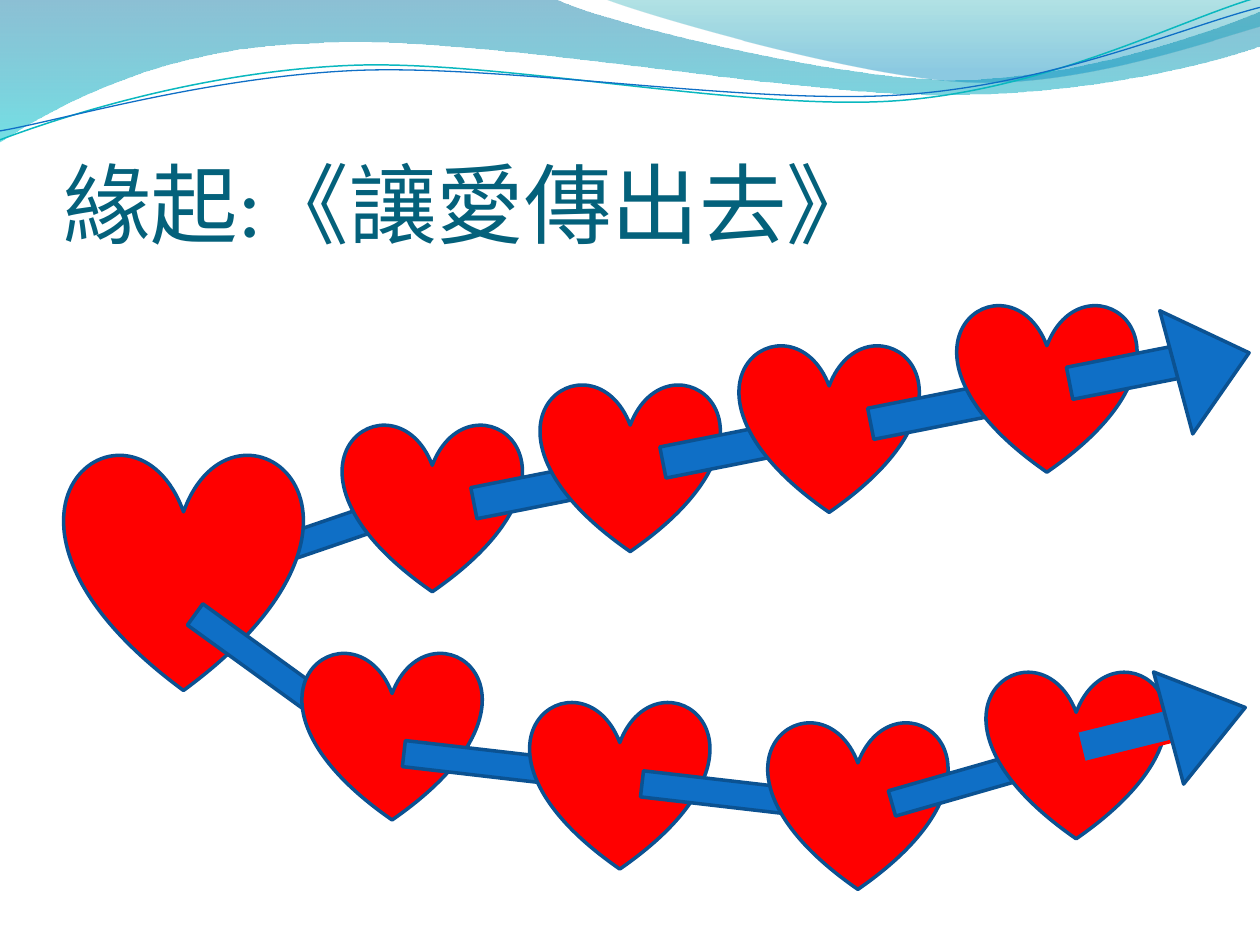
from lxml import etree
from pptx import Presentation
from pptx.dml.color import RGBColor
from pptx.enum.lang import MSO_LANGUAGE_ID
from pptx.enum.shapes import MSO_SHAPE
from pptx.enum.text import MSO_ANCHOR, MSO_AUTO_SIZE, PP_ALIGN
from pptx.oxml.ns import qn
from pptx.util import Cm, Pt

RECT, HEART, TRIANGLE = MSO_SHAPE.RECTANGLE, MSO_SHAPE.HEART, MSO_SHAPE.ISOSCELES_TRIANGLE
LEFT, BOTTOM, NO_FIT = PP_ALIGN.LEFT, MSO_ANCHOR.BOTTOM, MSO_AUTO_SIZE.NONE
CHINESE = MSO_LANGUAGE_ID.TRADITIONAL_CHINESE

THEME = {
    "font": "Calibri", "title_size": 50, "title": "04617B",
    "heart": "FF0000", "arrow": "0F6FC6", "outline": "0B5292", "outline_width": 2,
}

# Content: all lengths in centimetres
TITLE = "緣起:《讓愛傳出去》"
TITLE_BOX = (1.27, 1.96, 22.86, 3.18)

# Kind of part: preset, width, height, fill, outline
KINDS = {
    "big heart": (HEART, 4.8, 4.8, "heart", "outline"),
    "heart": (HEART, 3.61, 3.4, "heart", "outline"),
    "long bar": (RECT, 3.71, 0.53, "arrow", "outline"),
    "short bar": (RECT, 2.51, 0.64, "arrow", "outline"),
    "upper shaft": (RECT, 2.46, 0.66, "arrow", "outline"),
    "lower shaft": (RECT, 2.51, 0.66, "arrow", "heart"),
    "upper tip": (TRIANGLE, 2.57, 1.52, "arrow", "outline"),
    "lower tip": (TRIANGLE, 2.34, 1.6, "arrow", "outline"),
}
# Chain, back to front: kind, left, top, rotation
CHAIN = [
    ("long bar", 4.67, 10.52, 161.1), ("heart", 6.91, 8.53, 0),
    ("big heart", 1.3, 9.12, 0),
    ("long bar", 3.58, 13.21, 35.9), ("heart", 6.1, 13.13, 0),
    ("long bar", 8.13, 15.14, 6.6), ("heart", 10.69, 14.12, 0),
    ("long bar", 12.93, 15.75, 6.6), ("heart", 15.49, 14.53, 0),
    ("long bar", 17.91, 15.42, 344), ("heart", 19.89, 13.51, 0),
    ("lower shaft", 21.74, 14.43, 346.1), ("lower tip", 23.16, 13.67, 75),
    ("short bar", 9.53, 9.58, 348.8), ("heart", 10.9, 7.72, 0),
    ("short bar", 13.34, 8.76, 348.8), ("heart", 14.91, 6.93, 0),
    ("short bar", 17.53, 7.98, 348.8), ("heart", 19.3, 6.12, 0),
    ("upper shaft", 21.54, 7.16, 348.8), ("upper tip", 23.16, 6.55, 75),
]

# Waves: a start point, then straight steps (1 point) or Bézier steps (3 points)
# Bands carry gradient stops: position %, colour, opacity %
BANDS = [
    ([[(0, 0)], [(11.18, -0.03)],
      [(12.09, 0.43), (16.87, 1.6), (19.25, 1.6)],
      [(21.67, 1.6), (24.33, 0.66), (25.4, 0.23)], [(25.43, 0.91)],
      [(24.97, 1.12), (22.1, 1.93), (18.95, 1.91)],
      [(15.8, 1.91), (9.7, 0.71), (6.53, 0.86)],
      [(3.28, 0.91), (1.17, 2.11), (-0.03, 2.87)], [(0, 0)]],
     [(0, "0074A1", 45), (100, "00C6CF", 55)]),
    ([[(12.17, -0.03)],
      [(12.93, 0.28), (17.32, 1.57), (19.53, 1.65)],
      [(21.74, 1.75), (24.41, 0.81), (25.4, 0.53)], [(25.4, 0)],
      [(12.17, -0.03)]],
     [(0, "00A1A9", 30), (80, "008BBF", 45)]),
]
# Thin lines carry a colour and a width in points
THIN_LINES = [
    ([[(0, 2.82)],
      [(1.22, 2.36), (4.01, 1.45), (7.04, 1.32)],
      [(10.03, 1.19), (15.06, 2.26), (18.11, 2.03)],
      [(21.16, 1.8), (23.83, 0.38), (25.35, -0.05)]], "0AB8BF", 0.85),
    ([[(0, 2.64)],
      [(1.19, 2.44), (4.17, 1.55), (7.19, 1.42)],
      [(10.24, 1.3), (15.16, 2.13), (18.21, 1.91)],
      [(21.23, 1.7), (23.9, 0.53), (25.4, 0.15)]], "0F6FC6", 0.75),
]


def rgb(value):
    return RGBColor.from_string(value)


def add_wave(shapes, steps, close):
    """Freeform whose three-point steps become Bézier curves."""
    points = [(Cm(x), Cm(y)) for step in steps for x, y in step]
    builder = shapes.build_freeform(*points[0])
    builder.add_line_segments(points[1:], close=close)
    sp = builder.convert_to_shape()
    sp.shadow.inherit = False
    segments = iter(sp._element.findall(".//" + qn("a:lnTo")))
    for step in steps[1:]:
        group = [next(segments) for _ in step]
        if len(group) == 3:
            curve = etree.Element(qn("a:cubicBezTo"))
            group[0].addprevious(curve)
            for segment in group:
                curve.append(segment[0])
                segment.getparent().remove(segment)
    return sp


def set_gradient(sp, stops):
    """Vertical gradient with see-through stops."""
    sp.fill.gradient()
    grad = sp._element.spPr.find(qn("a:gradFill"))
    for child in list(grad):
        grad.remove(child)
    stop_list = etree.SubElement(grad, qn("a:gsLst"))
    for position, color, opacity in stops:
        gs = etree.SubElement(stop_list, qn("a:gs"), pos=str(position * 1000))
        clr = etree.SubElement(gs, qn("a:srgbClr"), val=color)
        etree.SubElement(clr, qn("a:alpha"), val=str(opacity * 1000))
    etree.SubElement(grad, qn("a:lin"), ang="5400000", scaled="0")


def add_part(shapes, kind, left, top, rotation):
    preset, width, height, fill, line = KINDS[kind]
    sp = shapes.add_shape(preset, Cm(left), Cm(top), Cm(width), Cm(height))
    sp.rotation = rotation
    sp.shadow.inherit = False
    sp.fill.solid()
    sp.fill.fore_color.rgb = rgb(THEME[fill])
    sp.line.color.rgb = rgb(THEME[line])
    sp.line.width = Pt(THEME["outline_width"])


def fill_title(sp):
    sp.left, sp.top, sp.width, sp.height = (Cm(v) for v in TITLE_BOX)
    tf = sp.text_frame
    tf.word_wrap = True
    tf.auto_size = NO_FIT
    tf.vertical_anchor = BOTTOM
    tf.margin_left = tf.margin_right = tf.margin_bottom = 0
    tf.margin_top = Cm(0.13)
    p = tf.paragraphs[0]
    p.alignment = LEFT
    r = p.add_run()
    r.text = TITLE
    r.font.name = THEME["font"]
    r.font.size = Pt(THEME["title_size"])
    r.font.color.rgb = rgb(THEME["title"])
    r.font.language_id = CHINESE


def main():
    prs = Presentation()
    prs.slide_width, prs.slide_height = Cm(25.4), Cm(19.05)
    s = prs.slides.add_slide(prs.slide_layouts[5])

    # Header waves
    for steps, stops in BANDS:
        sp = add_wave(s.shapes, steps, True)
        set_gradient(sp, stops)
        sp.line.fill.background()
    for steps, color, width in THIN_LINES:
        sp = add_wave(s.shapes, steps, False)
        sp.fill.background()
        sp.line.color.rgb = rgb(color)
        sp.line.width = Pt(width)

    # Title, in front of the waves
    title = s.shapes.title
    fill_title(title)
    s.shapes._spTree.append(title._element)

    # Two chains of hearts
    for part in CHAIN:
        add_part(s.shapes, *part)

    prs.save("out.pptx")


if __name__ == "__main__":
    main()
